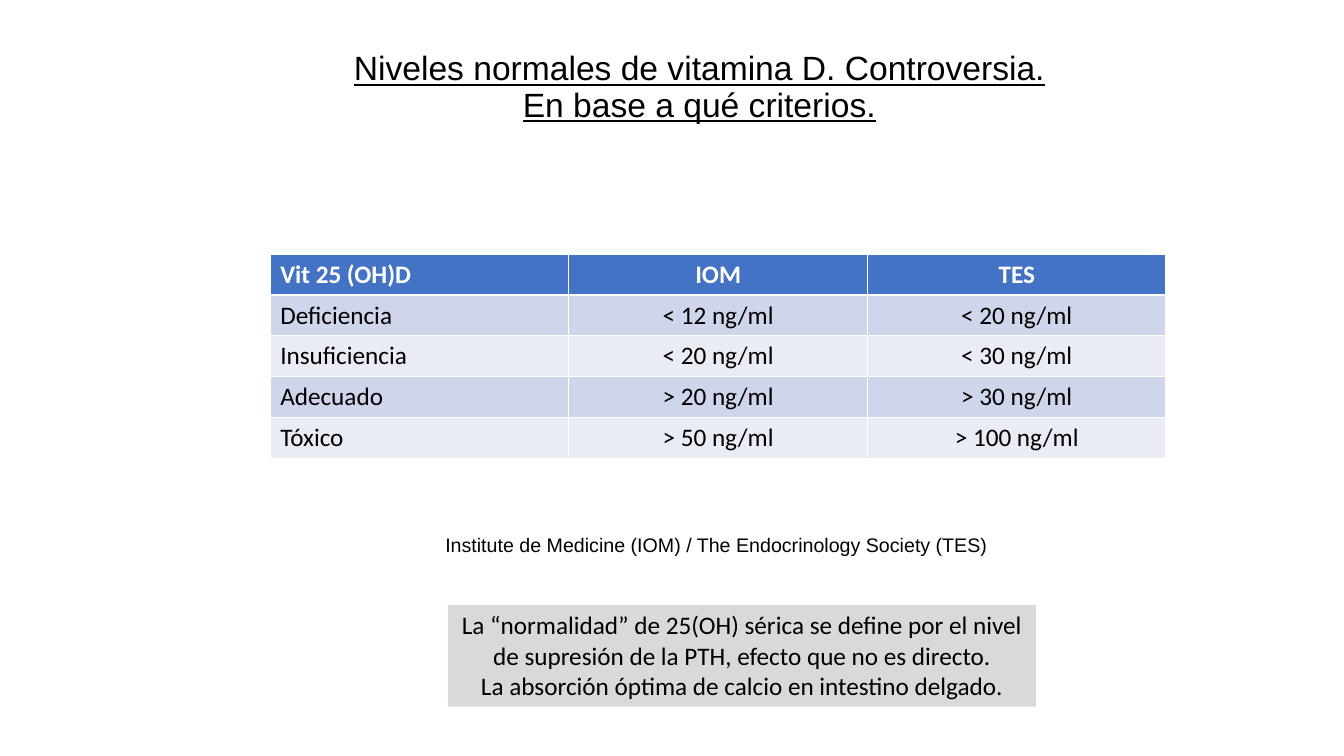
"""Build the slide on the disputed normal levels of vitamin D."""
from dataclasses import dataclass

from pptx import Presentation
from pptx.dml.color import RGBColor
from pptx.enum.shapes import MSO_SHAPE
from pptx.enum.text import MSO_ANCHOR, MSO_AUTO_SIZE, PP_ALIGN
from pptx.util import Pt


@dataclass(frozen=True)
class Theme:
    """Hold the colours, fonts and type sizes."""
    ink: str = "000000"
    paper: str = "FFFFFF"
    header: str = "4472C4"
    bands: tuple = ("CFD5EA", "E9EBF5")
    panel: str = "D9D9D9"
    heading_font: str = "Arial"
    body_font: str = "Calibri"
    title_size: int = 24
    body_size: int = 18
    source_size: int = 14


class SlideBuilder:
    """Draw styled elements on one slide."""

    def __init__(self, page, theme):
        """Keep the slide and its theme."""
        self.page = page
        self.theme = theme

    def style(self, frame, font, size, color, align=PP_ALIGN.LEFT, bold=False):
        """Format every paragraph of a text frame."""
        for para in frame.paragraphs:
            para.alignment = align
            para.font.name = font
            para.font.size = Pt(size)
            para.font.bold = bold
            para.font.color.rgb = RGBColor.from_string(color)

    def title(self, text, left, top, width, height):
        """Place the underlined title."""
        box = self.page.shapes.title
        box.left, box.top, box.width, box.height = map(Pt, (left, top, width, height))
        frame = box.text_frame
        frame.text = text
        frame.auto_size = MSO_AUTO_SIZE.NONE
        frame.vertical_anchor = MSO_ANCHOR.MIDDLE
        self.style(frame, self.theme.heading_font, self.theme.title_size,
                   self.theme.ink, PP_ALIGN.CENTER)
        para = frame.paragraphs[0]
        para.line_spacing = 0.9
        para.font.underline = True

    def source(self, text, left, top, width, height):
        """Add the line that spells out the abbreviations."""
        box = self.page.shapes.add_textbox(*map(Pt, (left, top, width, height)))
        frame = box.text_frame
        frame.text = text
        frame.word_wrap = False
        self.style(frame, self.theme.heading_font, self.theme.source_size, self.theme.ink)

    def panel(self, lines, left, top, width, height):
        """Add a filled box with centred lines."""
        box = self.page.shapes.add_shape(
            MSO_SHAPE.RECTANGLE, *map(Pt, (left, top, width, height)))
        box.shadow.inherit = False
        box.fill.solid()
        box.fill.fore_color.rgb = RGBColor.from_string(self.theme.panel)
        box.line.fill.background()
        frame = box.text_frame
        frame.text = "\n".join(lines)
        frame.word_wrap = False
        frame.vertical_anchor = MSO_ANCHOR.TOP
        self.style(frame, self.theme.body_font, self.theme.body_size,
                   self.theme.ink, PP_ALIGN.CENTER)

    def table(self, rows, left, top, width, height):
        """Add a table with a header row and banded body rows."""
        theme = self.theme
        table = self.page.shapes.add_table(
            len(rows), len(rows[0]), *map(Pt, (left, top, width, height))).table
        for row, values in enumerate(rows):
            is_header = row == 0
            fill = theme.header if is_header else theme.bands[(row - 1) % 2]
            color = theme.paper if is_header else theme.ink
            for column, value in enumerate(values):
                cell = table.cell(row, column)
                cell.text = value
                cell.fill.solid()
                cell.fill.fore_color.rgb = RGBColor.from_string(fill)
                align = PP_ALIGN.CENTER if column else PP_ALIGN.LEFT
                self.style(cell.text_frame, theme.body_font, theme.body_size,
                           color, align, is_header)


LEVELS = [
    ("Vit 25 (OH)D", "IOM", "TES"),
    ("Deficiencia", "< 12 ng/ml", "< 20 ng/ml"),
    ("Insuficiencia", "< 20 ng/ml", "< 30 ng/ml"),
    ("Adecuado", "> 20 ng/ml", "> 30 ng/ml"),
    ("Tóxico", "> 50 ng/ml", "> 100 ng/ml"),
]
CRITERIA = [
    "La “normalidad” de 25(OH) sérica se define por el nivel",
    "de supresión de la PTH, efecto que no es directo.",
    "La absorción óptima de calcio en intestino delgado.",
]


def main():
    """Build and save the deck."""
    deck = Presentation()
    deck.slide_width, deck.slide_height = Pt(960), Pt(540)
    page = deck.slides.add_slide(deck.slide_layouts.get_by_name("Title Only"))
    builder = SlideBuilder(page, Theme())
    builder.title("Niveles normales de vitamina D. Controversia.\vEn base a qué criterios.",
                  175.5, 18, 648, 90)
    builder.source("Institute de Medicine (IOM) / The Endocrinology Society (TES)",
                   311, 377, 404, 24.5)
    builder.panel(CRITERIA, 320, 432, 420, 72.7)
    builder.table(LEVELS, 193, 181.5, 640, 146)
    deck.save("out.pptx")


if __name__ == "__main__":
    main()
